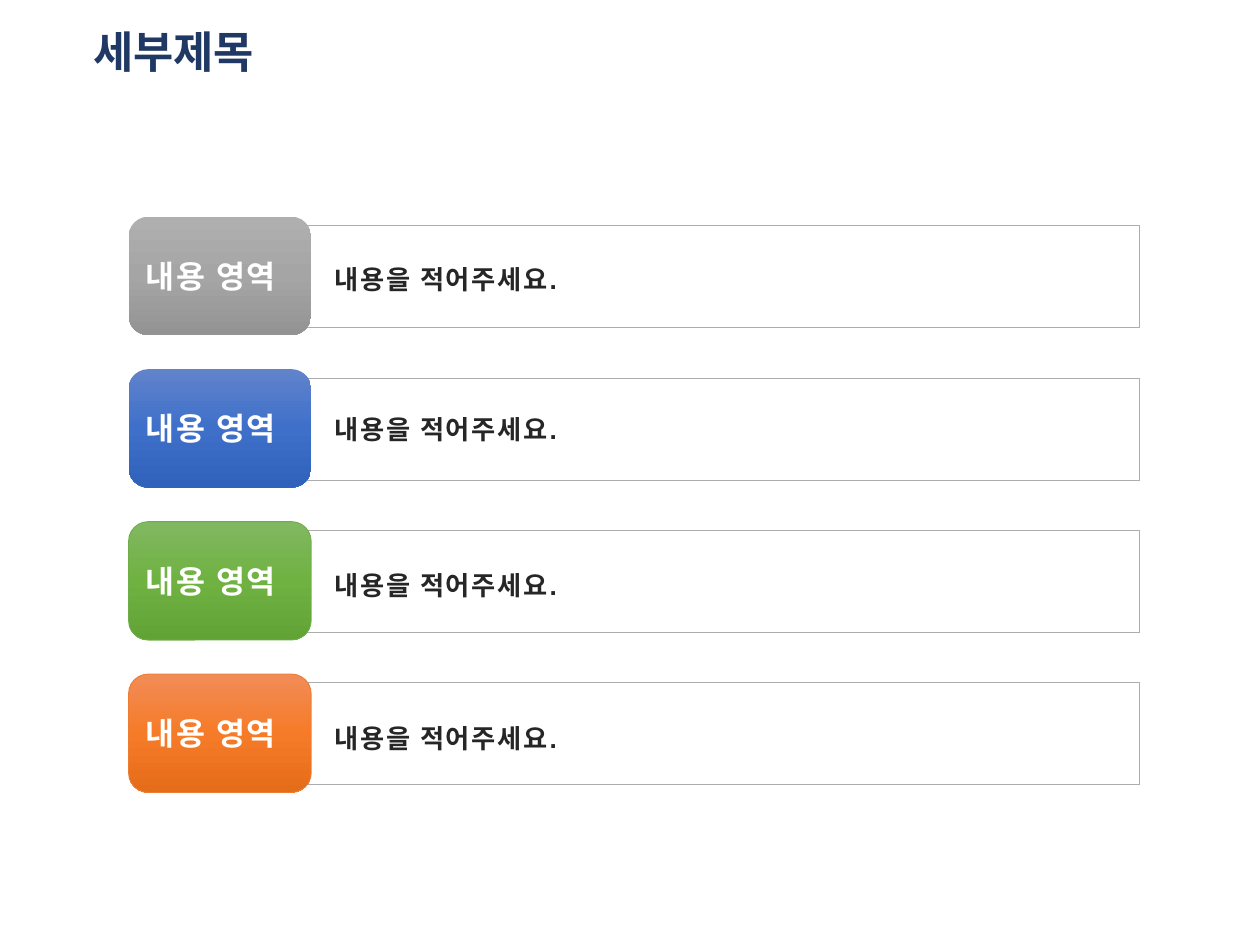
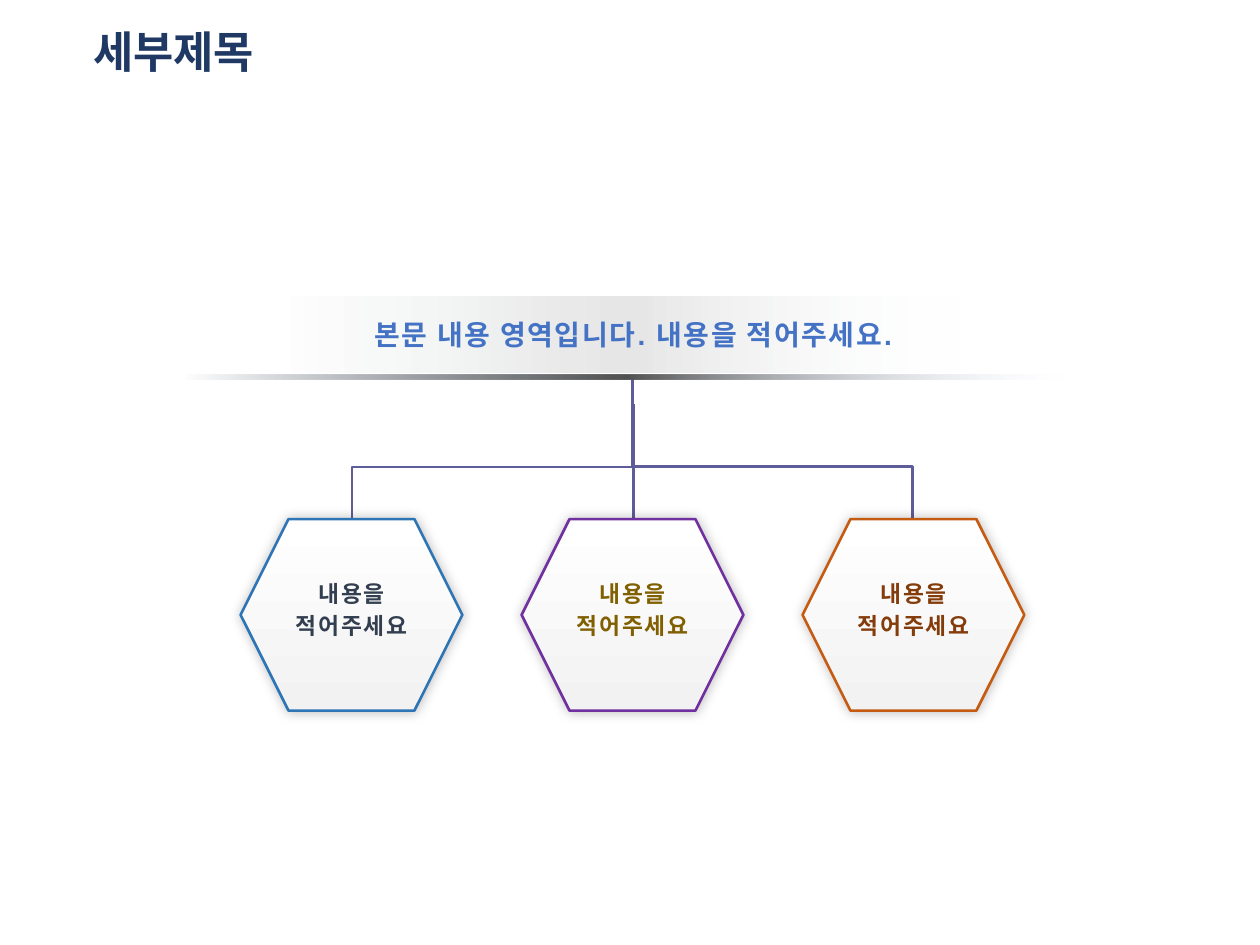
import lxml.etree
import pptx
import pptx.dml.color
import pptx.enum.shapes
import pptx.enum.text
import pptx.oxml.ns
import pptx.util

Inches = pptx.util.Inches
Pt = pptx.util.Pt
RGBColor = pptx.dml.color.RGBColor
ShapeType = pptx.enum.shapes.MSO_SHAPE
ConnectorType = pptx.enum.shapes.MSO_CONNECTOR
Align = pptx.enum.text.PP_ALIGN
qn = pptx.oxml.ns.qn

COLORS = {
    "title": "203864", "body": "262626", "white": "FFFFFF", "frame": "ACACAC",
    "connector": "5E5D99", "banner_text": "4472C4", "black": "000000",
    "fade_left": "333F50", "fade_right": "E1EBFB", "rule": "525252",
    "hexagon_bottom": "F2F2F2",
}


def fill_gradient(shape, stops, angle):
    """Fill with (position, colour, opacity) stops; angle is counter-clockwise."""
    shape.fill.gradient()
    shape.fill.gradient_angle = angle
    stop_list = shape._element.spPr.find(qn("a:gradFill")).find(qn("a:gsLst"))
    for old_stop in list(stop_list):
        stop_list.remove(old_stop)
    for position, color, opacity in stops:
        stop = lxml.etree.SubElement(stop_list, qn("a:gs"), pos=str(position * 1000))
        fill = lxml.etree.SubElement(stop, qn("a:srgbClr"), val=color)
        if opacity < 100:
            lxml.etree.SubElement(fill, qn("a:alpha"), val=str(opacity * 1000))


def add_text(slide, box, lines, size, color, alignment=Align.LEFT, wrap=True, spacing=None):
    """Add a bold, slightly tracked text box with one paragraph per line."""
    shape = slide.shapes.add_textbox(*map(Inches, box))
    frame = shape.text_frame
    frame.word_wrap = wrap
    frame.auto_size = pptx.enum.text.MSO_AUTO_SIZE.SHAPE_TO_FIT_TEXT
    font_format = {"name": "Arial", "size": Pt(size), "bold": True}
    for index, line in enumerate(lines):
        paragraph = frame.add_paragraph() if index else frame.paragraphs[0]
        paragraph.alignment = alignment
        if spacing:
            paragraph.line_spacing = Pt(spacing)
        run = paragraph.add_run()
        run.text = line
        for name, value in font_format.items():
            setattr(run.font, name, value)
        run.font.color.rgb = RGBColor.from_string(color)
        run._r.get_or_add_rPr().set("spc", "100")


presentation = pptx.Presentation()
presentation.slide_width = Inches(10)
presentation.slide_height = Inches(7.5)

# Both slides share the same title
title_box = {"left": 0.64, "top": 0, "width": 8.62, "height": 0.86}
title_format = {"name": "Calibri", "size": Pt(25), "bold": True}
slides = []
for number in range(2):
    slide = presentation.slides.add_slide(presentation.slide_layouts[5])
    title = slide.shapes.title
    for name, value in title_box.items():
        setattr(title, name, Inches(value))
    title.text_frame.text = "세부제목"
    title.text_frame.vertical_anchor = pptx.enum.text.MSO_ANCHOR.MIDDLE
    paragraph = title.text_frame.paragraphs[0]
    paragraph.alignment = Align.LEFT
    paragraph.line_spacing = 0.9
    font = paragraph.runs[0].font
    for name, value in title_format.items():
        setattr(font, name, value)
    font.color.rgb = RGBColor.from_string(COLORS["title"])
    slides.append(slide)
list_slide, diagram_slide = slides

# Slide 1: four rows, each a framed text with a coloured tab
row_pitch = 1.21
rows = [
    # top, middle and bottom colour of the tab, its outline, top of the text
    (("AFAFAF", "A5A5A5", "939393"), None, 2.04),
    (("6183CB", "3E70CA", "3062BB"), None, 3.23),
    (("81B861", "6FB242", "62A336"), "70AD47", 4.47),
    (("F18C57", "F67B28", "E56C19"), "ED7D31", 5.68),
]
for index, (tab_colors, outline, text_top) in enumerate(rows):
    offset = index * row_pitch
    frame = list_slide.shapes.add_shape(
        ShapeType.RECTANGLE, Inches(1.92), Inches(1.79 + offset), Inches(7.12), Inches(0.81))
    frame.shadow.inherit = False
    frame.fill.solid()
    frame.fill.fore_color.rgb = RGBColor.from_string(COLORS["white"])
    frame.line.color.rgb = RGBColor.from_string(COLORS["frame"])
    frame.line.width = Pt(0.5)

    tab = list_slide.shapes.add_shape(
        ShapeType.ROUNDED_RECTANGLE, Inches(1.02), Inches(1.72 + offset), Inches(1.45), Inches(0.94))
    tab.shadow.inherit = False
    fill_gradient(tab, [(at, color, 100) for at, color in zip((0, 50, 100), tab_colors)], 270)
    if outline:
        tab.line.color.rgb = RGBColor.from_string(outline)
        tab.line.width = Pt(0.5)
    else:
        tab.line.fill.background()

    add_text(list_slide, (1.06, 1.99 + offset, 1.37, 0.4), ["내용 영역"], 18,
             COLORS["white"], wrap=False)
    add_text(list_slide, (2.56, text_top, 6.47, 0.35), ["내용을 적어주세요."], 15, COLORS["body"])

# Slide 2: connectors from the banner to the three hexagons
# Each elbow is turned a quarter so that it leaves and arrives vertically
connectors = [
    (ConnectorType.ELBOW, (4.94, 3.08, 7.32, 5.3), {"rot": "16200000", "flipV": "1"}),
    (ConnectorType.ELBOW, (2.72, 3.08, 5.1, 5.31), {"rot": "5400000", "flipH": "1", "flipV": "1"}),
    (ConnectorType.STRAIGHT, (5.03, 3.21, 5.03, 4.6), {}),
]
for kind, ends, turn in connectors:
    connector = diagram_slide.shapes.add_connector(kind, *map(Inches, ends))
    connector.line.color.rgb = RGBColor.from_string(COLORS["connector"])
    connector.line.width = Pt(1.5)
    properties = connector._element.spPr
    lxml.etree.SubElement(properties, qn("a:effectLst"))
    for name, value in turn.items():
        properties.find(qn("a:xfrm")).set(name, value)
    if kind == ConnectorType.ELBOW:
        adjustments = properties.find(qn("a:prstGeom")).find(qn("a:avLst"))
        lxml.etree.SubElement(adjustments, qn("a:gd"), name="adj1", fmla="val 70500")

# Banner and the rule below it, both fading out to the sides
bands = [
    ((2.26, 2.35, 5.42, 0.61), COLORS["black"], 10),
    ((1.47, 2.97, 7, 0.04), COLORS["rule"], 100),
]
for box, center_color, opacity in bands:
    band = diagram_slide.shapes.add_shape(ShapeType.RECTANGLE, *map(Inches, box))
    band.shadow.inherit = False
    band.line.fill.background()
    fill_gradient(band, [(0, COLORS["fade_left"], 0), (50, center_color, opacity),
                         (100, COLORS["fade_right"], 0)], 0)
add_text(diagram_slide, (1.79, 2.47, 6.47, 0.37), ["본문 내용 영역입니다. 내용을 적어주세요."],
         16, COLORS["banner_text"], Align.CENTER)

# Hexagons with a soft glow-like shadow: outline and text colour
hexagons = [("2E75B6", "333F50"), ("7030A0", "806000"), ("C55A11", "843C0B")]
for index, (outline, text_color) in enumerate(hexagons):
    left = 1.91 + index * 2.23
    hexagon = diagram_slide.shapes.add_shape(
        ShapeType.HEXAGON, Inches(left), Inches(4.12), Inches(1.76), Inches(1.52))
    fill_gradient(hexagon, [(0, COLORS["white"], 100), (100, COLORS["hexagon_bottom"], 100)], 270)
    hexagon.line.color.rgb = RGBColor.from_string(outline)
    hexagon.line.width = Pt(1.5)
    hexagon.shadow.inherit = False
    effects = hexagon._element.spPr.find(qn("a:effectLst"))
    shadow = lxml.etree.SubElement(effects, qn("a:outerShdw"), blurRad=str(Pt(7)), dist="0", dir="0")
    shadow_color = lxml.etree.SubElement(shadow, qn("a:srgbClr"), val=COLORS["black"])
    lxml.etree.SubElement(shadow_color, qn("a:alpha"), val="25000")
    add_text(diagram_slide, (left + 0.02, 4.52, 1.72, 0.61), ["내용을", "적어주세요"], 13,
             text_color, Align.CENTER, spacing=18)

presentation.save("out.pptx")
